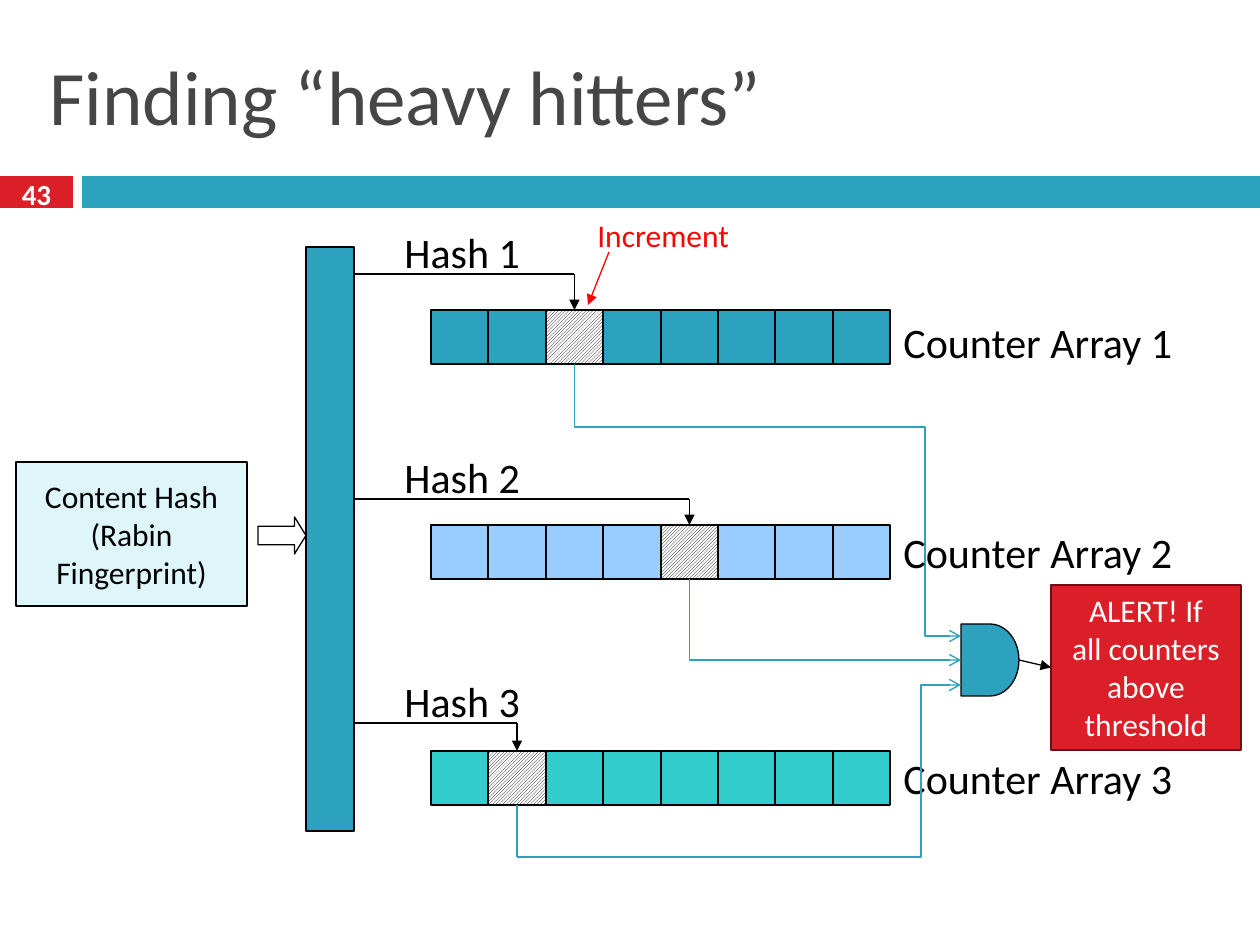
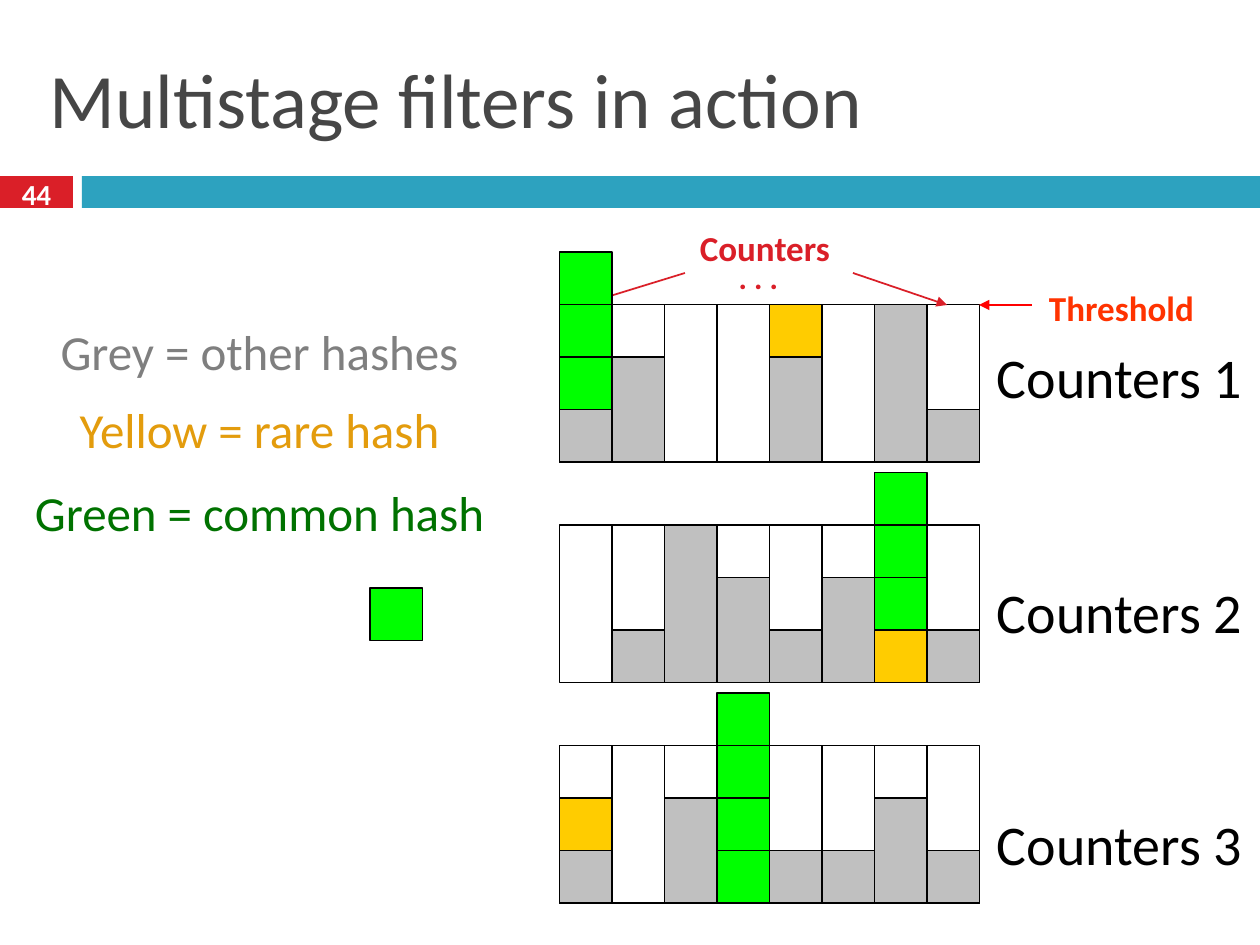
from lxml import etree
from pptx import Presentation
from pptx import util as u
from pptx.dml.color import RGBColor
from pptx.enum import dml, shapes, text
from pptx.oxml.ns import qn

SCALE = 914400 / 126  # EMU in one px
COLORS = {
    "black": "000000", "white": "FFFFFF", "title": "464646", "teal": "2DA2BF",
    "red": "DA1F28", "dark red": "6D1014", "bright red": "FF0000", "orange": "FF3300",
    "pale": "DEF5FA", "sky": "99CCFF", "aqua": "33CCCC", "silver": "C0C0C0",
    "yellow": "FFCC00", "green": "00FF00", "grey text": "7F7F7F",
    "yellow text": "E39C0D", "green text": "007200",
}
SHAPE = shapes.MSO_SHAPE
LINE = shapes.MSO_CONNECTOR
CENTER = text.PP_ALIGN.CENTER
TOP, MIDDLE = text.MSO_ANCHOR.TOP, text.MSO_ANCHOR.MIDDLE
TOP_SIDE, LEFT_SIDE, BOTTOM_SIDE, RIGHT_SIDE = range(4)


def px(*lengths):
    return [u.Emu(round(n * SCALE)) for n in lengths]


def rgb(name):
    return RGBColor.from_string(COLORS[name])


class Deck:
    font = "Calibri"
    line_width = 0.75

    def __init__(self):
        self.prs = Presentation()
        self.prs.slide_width, self.prs.slide_height = px(1260, 945)
        self.s = None

    def slide(self, title, number, title_top):
        self.s = self.prs.slides.add_slide(self.prs.slide_layouts[6])
        self.shape((0, 176, 73, 32), "red", line=None)
        self.shape((82, 176, 1178, 32), "teal", line=None)
        self.label((37, title_top, 1144, 158), title, 44, "title", anchor=MIDDLE)
        self.label((0, 173, 73, 42), str(number), 16.6, "white", bold=True,
                   align=CENTER, anchor=MIDDLE)

    def shape(self, box, fill=None, line="black", kind=SHAPE.RECTANGLE):
        sp = self.s.shapes.add_shape(kind, *px(*box))
        sp.shadow.inherit = False
        if fill:
            sp.fill.solid()
            sp.fill.fore_color.rgb = rgb(fill)
        else:
            sp.fill.background()
        if line:
            sp.line.color.rgb = rgb(line)
            sp.line.width = u.Pt(self.line_width)
        else:
            sp.line.fill.background()
        return sp

    def hatched(self, box):
        sp = self.shape(box)
        sp.fill.patterned()
        sp.fill.pattern = dml.MSO_PATTERN.LIGHT_UPWARD_DIAGONAL
        sp.fill.fore_color.rgb = rgb("black")
        sp.fill.back_color.rgb = rgb("white")
        return sp

    def set_text(self, sp, content, size, color, bold=False, align=None, anchor=TOP):
        """Fill a shape with text, one paragraph for each line of content."""
        tf = sp.text_frame
        tf.word_wrap = True
        tf.vertical_anchor = anchor
        look = {"name": self.font, "size": u.Pt(size), "bold": bold}
        for i, words in enumerate(content.split("\n")):
            p = tf.add_paragraph() if i else tf.paragraphs[0]
            p.alignment = align
            r = p.add_run()
            r.text = words
            for key, value in look.items():
                setattr(r.font, key, value)
            r.font.color.rgb = rgb(color)

    def label(self, box, content, size, color, **look):
        sp = self.s.shapes.add_textbox(*px(*box))
        self.set_text(sp, content, size, color, **look)

    def line(self, start, end, color="black", width=line_width, head=None,
             kind=LINE.STRAIGHT, begin=None, finish=None):
        """Draw a line; begin and finish are (shape, side) pairs to join."""
        c = self.s.shapes.add_connector(kind, *px(*start, *end))
        c.line.color.rgb = rgb(color)
        c.line.width = u.Pt(width)
        props = c._element.spPr
        if head:
            etree.SubElement(props.find(qn("a:ln")), qn("a:tailEnd"), type=head)
        etree.SubElement(props, qn("a:effectLst"))
        if begin:
            c.begin_connect(*begin)
        if finish:
            c.end_connect(*finish)
        return c

    def elbow(self, start, end, turn_x, **look):
        """Draw a bent line whose vertical part stands at turn_x."""
        c = self.line(start, end, kind=LINE.ELBOW, **look)
        share = round(100000 * (turn_x - start[0]) / (end[0] - start[0]))
        geom = c._element.spPr.find(qn("a:prstGeom"))
        guides = geom.find(qn("a:avLst"))
        if guides is None:
            guides = etree.SubElement(geom, qn("a:avLst"))
        etree.SubElement(guides, qn("a:gd"), name="adj1", fmla=f"val {share}")


def heavy_hitters(d):
    d.slide("Finding “heavy hitters”", 43, 16)
    left, cell, height, cells = 431, 57.4, 54, 8
    edges = [round(left + cell * i) for i in range(cells + 1)]

    content = d.shape((16, 462, 231, 144), "pale")
    d.set_text(content, "Content Hash\n(Rabin\nFingerprint)", 18, "black",
               align=CENTER, anchor=MIDDLE)
    arrow = d.shape((258, 517, 48, 37), kind=SHAPE.RIGHT_ARROW)
    arrow.adjustments[1] = 0.31
    d.shape((306, 247, 48, 584), "teal")
    gate = d.shape((961, 624, 58, 72), "teal", kind=SHAPE.FLOWCHART_DELAY)
    alert = d.shape((1051, 585, 190, 165), "red", "dark red")
    d.set_text(alert, "ALERT! If\nall counters\nabove threshold", 18, "white",
               align=CENTER)
    d.line((1019, 660), (1051, 660), head="triangle",
           begin=(gate, RIGHT_SIDE), finish=(alert, LEFT_SIDE))

    # array top, fill, hit cell, hash line y, label tops, drop y, turn x, gate input y
    arrays = [
        (310, "teal", 2, 274, 220, 310, 427, 925, 636),
        (525, "sky", 4, 499, 445, 520, None, None, 660),
        (751, "aqua", 1, 723, 669, 746, 857, 921, 685),
    ]
    wire = {"color": "teal", "width": 0.79}
    for n, (top, fill, hit, hash_y, hash_top, name_top, drop_y, turn_x, input_y) in \
            enumerate(arrays, 1):
        bottom = top + height
        d.shape((left, top, edges[-1] - left, height), fill)
        for x in edges[1:-1]:
            d.line((x, top), (x, bottom))
        counter = d.hatched((edges[hit], top, edges[hit + 1] - edges[hit], height))
        mid = (edges[hit] + edges[hit + 1]) / 2
        d.line((354, hash_y), (mid, hash_y))
        d.line((mid, hash_y), (mid, top), head="triangle", finish=(counter, TOP_SIDE))
        d.label((392, hash_top, 159, 63), f"Hash {n}", 24, "black")
        d.label((891, name_top, 323, 63), f"Counter Array {n}", 24, "black")
        if drop_y:
            d.line((mid, bottom), (mid, drop_y), begin=(counter, BOTTOM_SIDE), **wire)
        d.elbow((mid, drop_y or bottom), (961, input_y), turn_x or mid,
                head="arrow", **wire)

    d.line((609, 252), (588, 305), "bright red", head="triangle")
    d.label((585, 210, 199, 50), "Increment", 18, "bright red")


def multistage_filters(d):
    d.slide("Multistage filters in action", 44, 19)
    left, unit, threshold = 559.5, 52.5, 3
    d.line((685, 273), (581, 305), "red", 1, "triangle")

    # Stacks from the bottom up: a digit is a grey bar of that height
    filters = [
        (462, 336, ["1GGG", "2", "", "", "2Y", "", "3", "1"]),
        (682.5, 571, ["", "1", "3", "2", "1", "2", "YGGG", "1"]),
        (903, 803, ["1Y", "", "2", "GGGG", "1", "1", "2", "1"]),
    ]
    fills = {"G": "green", "Y": "yellow"}
    for n, (base, name_top, stacks) in enumerate(filters, 1):
        for col, stack in enumerate(stacks):
            x = left + col * unit
            d.shape((x, base - threshold * unit, unit, threshold * unit), "white")
            y = base
            for mark in stack:
                height = unit * (int(mark) if mark.isdigit() else 1)
                y -= height
                d.shape((x, y, unit, height), fills.get(mark, "silver"))
        d.label((979, name_top, 281, 149), f"Counters {n}", 32, "black", align=CENTER)
    d.shape((370, 588, unit, unit), "green")

    legend = [
        (315, "Grey = other hashes", "grey text"),
        (393, "Yellow = rare hash", "yellow text"),
        (476, "Green = common hash", "green text"),
    ]
    for top, words, color in legend:
        d.label((-29, top, 577, 72), words, 28, color, align=CENTER)

    notes = [
        ((644, 220, 242, 54), "Counters", 20, "red"),
        ((664, 252, 189, 47), ". . .", 18, "red"),
        ((1022, 280, 199, 54), "Threshold", 20, "orange"),
    ]
    for box, words, size, color in notes:
        d.label(box, words, size, color, bold=True, align=CENTER)
    d.line((853, 273), (947, 305), "red", 1, "triangle")
    d.line((1032, 305), (979, 305), "bright red", 1, "triangle")


def main():
    d = Deck()
    heavy_hitters(d)
    multistage_filters(d)
    d.prs.save("out.pptx")


if __name__ == "__main__":
    main()
